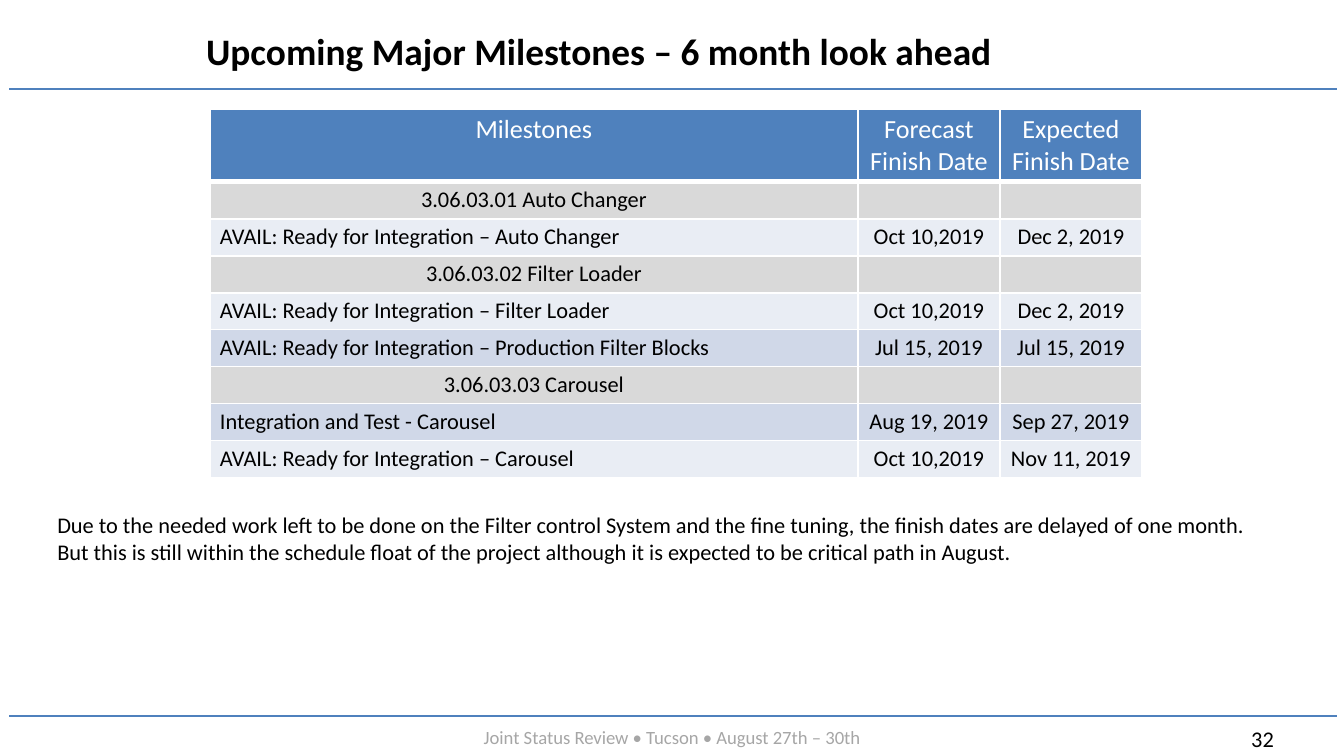
from typing import NamedTuple

from lxml import etree
from pptx import Presentation
from pptx.dml.color import RGBColor
from pptx.enum.shapes import MSO_CONNECTOR
from pptx.enum.text import MSO_ANCHOR, MSO_AUTO_SIZE, PP_ALIGN
from pptx.oxml.ns import qn
from pptx.util import Emu, Pt

LEFT, CENTER = PP_ALIGN.LEFT, PP_ALIGN.CENTER
TOP, MIDDLE = MSO_ANCHOR.TOP, MSO_ANCHOR.MIDDLE
STRAIGHT = MSO_CONNECTOR.STRAIGHT
FIT_SHAPE = MSO_AUTO_SIZE.SHAPE_TO_FIT_TEXT

BLACK = RGBColor(0x00, 0x00, 0x00)
WHITE = RGBColor(0xFF, 0xFF, 0xFF)
BLUE = RGBColor(0x4F, 0x81, 0xBD)
GRAY_TEXT = RGBColor(0xA6, 0xA6, 0xA6)
SECTION_FILL = RGBColor(0xD9, 0xD9, 0xD9)
LIGHT_FILL = RGBColor(0xE9, 0xED, 0xF4)
DARK_FILL = RGBColor(0xD0, 0xD8, 0xE8)

FONT = "Calibri"
PX_PER_INCH = 134.4
SLIDE_W, SLIDE_H = 1344, 756
RULE_LEFT, RULE_RIGHT = 9, 1337
RULE_YS = (89, 716)
TABLE_LEFT, TABLE_TOP = 210, 109
COL_WIDTHS = (648, 142, 142)
HEADER_H, ROW_H = 72, 37
INSET_X, INSET_Y = 10, 5


class Label(NamedTuple):
    text: str
    left: int
    top: int
    width: int
    height: int
    size: int
    color: RGBColor = BLACK
    align: PP_ALIGN = LEFT
    anchor: MSO_ANCHOR = TOP
    bold: bool = False


class Row(NamedTuple):
    cells: tuple[str, str, str]
    fill: RGBColor
    name_align: PP_ALIGN = LEFT
    size: int = 12
    color: RGBColor = BLACK
    bottom_border: int = 1


def section(name: str) -> Row:
    return Row((name, "", ""), SECTION_FILL, CENTER)


LABELS = (
    Label("32", 1238, 719, 83, 40, 12),
    Label("Joint Status Review • Tucson • August 27th – 30th",
          67, 719, 1210, 36, 10, GRAY_TEXT, CENTER),
    Label("Upcoming Major Milestones – 6 month look ahead",
          112, 20, 974, 62, 20, BLACK, CENTER, MIDDLE, True),
    Label("Due to the needed work left to be done on the Filter control System "
          "and the fine tuning, the finish dates are delayed of one month.\n"
          "But this is still within the schedule float of the project although "
          "it is expected to be critical path in August.",
          44, 505, 1232, 109, 12),
)

ROWS = (
    Row(("Milestones", "Forecast Finish Date", "Expected\nFinish Date"),
        BLUE, CENTER, 14, WHITE, 3),
    section("3.06.03.01 Auto Changer"),
    Row(("AVAIL: Ready for Integration – Auto Changer",
         "Oct 10,2019", "Dec 2, 2019"), LIGHT_FILL),
    section("3.06.03.02 Filter Loader"),
    Row(("AVAIL: Ready for Integration – Filter Loader",
         "Oct 10,2019", "Dec 2, 2019"), LIGHT_FILL),
    Row(("AVAIL: Ready for Integration – Production Filter Blocks",
         "Jul 15, 2019", "Jul 15, 2019"), DARK_FILL),
    section("3.06.03.03 Carousel"),
    Row(("Integration and Test - Carousel",
         "Aug 19, 2019", "Sep 27, 2019"), DARK_FILL),
    Row(("AVAIL: Ready for Integration – Carousel",
         "Oct 10,2019", "Nov 11, 2019"), LIGHT_FILL),
)


def px(n: int) -> Emu:
    return Emu(round(n * 914400 / PX_PER_INCH))


def set_text(tf, text: str, size: int, color: RGBColor,
             align: PP_ALIGN, bold: bool = False) -> None:
    tf.text = text
    for p in tf.paragraphs:
        p.alignment = align
        for r in p.runs:
            r.font.name = FONT
            r.font.size = Pt(size)
            r.font.bold = bold
            r.font.color.rgb = color
        end = etree.SubElement(p._p, qn("a:endParaRPr"))
        end.set("sz", str(size * 100))


def add_rule(s, y: int) -> None:
    line = s.shapes.add_connector(
        STRAIGHT, px(RULE_RIGHT), px(y), px(RULE_LEFT), px(y))
    line.line.color.rgb = BLUE
    line.line.width = Pt(1)
    etree.SubElement(line._element.spPr, qn("a:effectLst"))


def add_label(s, label: Label) -> None:
    sp = s.shapes.add_textbox(
        px(label.left), px(label.top), px(label.width), px(label.height))
    tf = sp.text_frame
    tf.word_wrap = True
    if label.anchor == TOP:
        tf.auto_size = FIT_SHAPE
    tf.vertical_anchor = label.anchor
    set_text(tf, label.text, label.size, label.color, label.align, label.bold)


def add_borders(cell, bottom: int) -> None:
    tc_pr = cell._tc.get_or_add_tcPr()
    for side, width in (("L", 1), ("R", 1), ("T", 1), ("B", bottom)):
        ln = etree.SubElement(tc_pr, qn(f"a:ln{side}"), w=str(Pt(width)))
        fill = etree.SubElement(ln, qn("a:solidFill"))
        etree.SubElement(fill, qn("a:srgbClr"), val=str(WHITE))


def add_milestones(s) -> None:
    heights = [HEADER_H] + [ROW_H] * (len(ROWS) - 1)
    table = s.shapes.add_table(
        len(ROWS), len(COL_WIDTHS), px(TABLE_LEFT), px(TABLE_TOP),
        px(sum(COL_WIDTHS)), px(sum(heights))).table
    table.first_row = False
    table.horz_banding = False
    for column, width in zip(table.columns, COL_WIDTHS):
        column.width = px(width)
    for table_row, row, height in zip(table.rows, ROWS, heights):
        table_row.height = px(height)
        for i, (cell, text) in enumerate(zip(table_row.cells, row.cells)):
            cell.margin_left = cell.margin_right = px(INSET_X)
            cell.margin_top = cell.margin_bottom = px(INSET_Y)
            add_borders(cell, row.bottom_border)
            cell.fill.solid()
            cell.fill.fore_color.rgb = row.fill
            align = CENTER if i else row.name_align
            set_text(cell.text_frame, text, row.size, row.color, align)


def main() -> None:
    prs = Presentation()
    prs.slide_width, prs.slide_height = px(SLIDE_W), px(SLIDE_H)
    s = prs.slides.add_slide(prs.slide_layouts[6])
    for y in RULE_YS:
        add_rule(s, y)
    for label in LABELS:
        add_label(s, label)
    add_milestones(s)
    prs.save("out.pptx")


if __name__ == "__main__":
    main()
